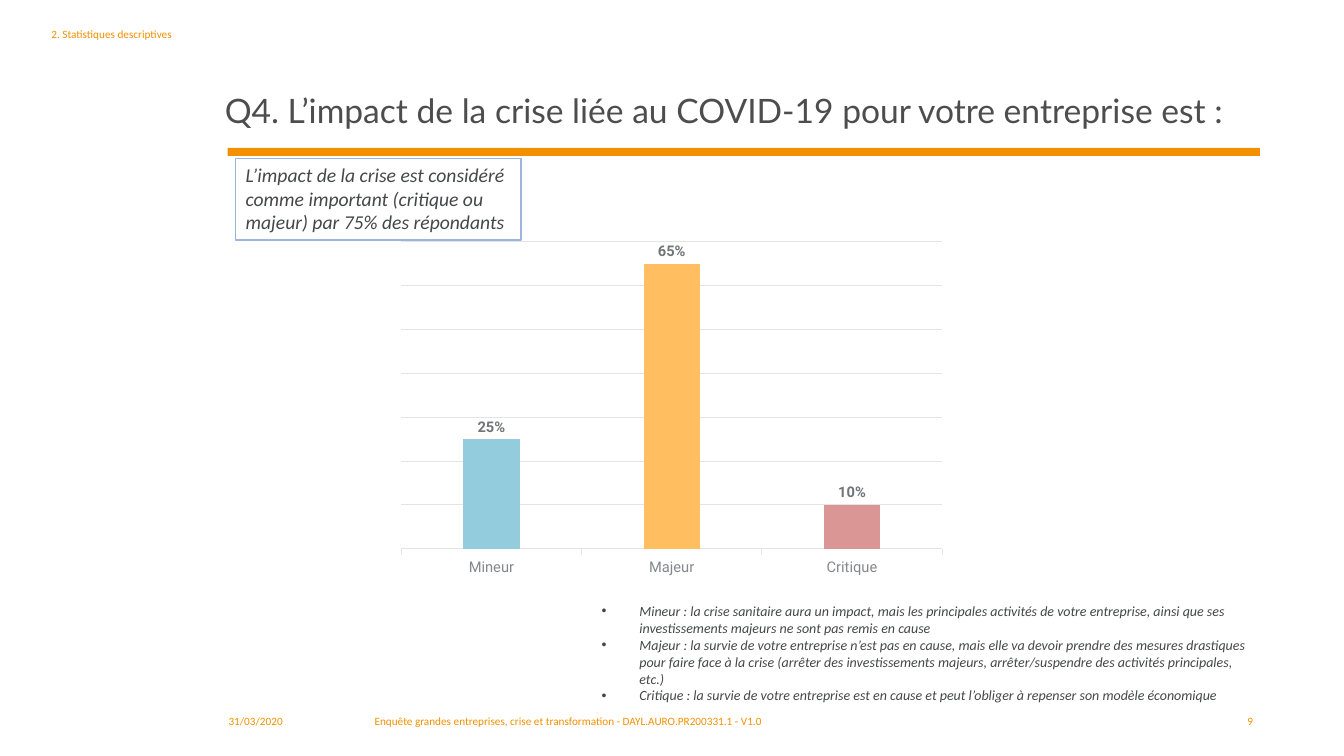
from dataclasses import dataclass

from lxml import etree
from pptx import Presentation
from pptx import util as u
from pptx.chart import data as chart_data
from pptx.dml.color import RGBColor
from pptx.enum import chart as ch
from pptx.enum import shapes, text
from pptx.oxml import parse_xml
from pptx.oxml.ns import nsdecls, qn
from pptx.util import Cm

ORANGE = RGBColor(0xF3, 0x90, 0x00)
WHITE = RGBColor(0xFF, 0xFF, 0xFF)
TITLE_GREY = RGBColor(0x4D, 0x4D, 0x4D)
TEXT_GREY = RGBColor(0x45, 0x47, 0x48)
LABEL_GREY = RGBColor(0x72, 0x75, 0x77)
AXIS_GREY = RGBColor(0x85, 0x88, 0x8A)
GRID_GREY = RGBColor(0xE3, 0xE4, 0xE4)
FRAME_BLUE = RGBColor(0x9B, 0xB5, 0xDF)
BAR_BLUE = RGBColor(0x93, 0xCD, 0xDD)
BAR_ORANGE = RGBColor(0xFF, 0xBE, 0x5F)
BAR_RED = RGBColor(0xD9, 0x96, 0x94)

FOOTER_TOP = 17.88
FOOTER_HEIGHT = 0.91
LIST_INDENT = Cm(0.95)


@dataclass(frozen=True)
class Impact:
    name: str
    share: float
    color: RGBColor
    meaning: str


@dataclass(frozen=True)
class FooterPart:
    wording: str
    left: float
    width: float
    align: text.PP_ALIGN = text.PP_ALIGN.LEFT


IMPACTS = [
    Impact("Mineur", 0.25, BAR_BLUE,
           "la crise sanitaire aura un impact, mais les principales activités de votre "
           "entreprise, ainsi que ses investissements majeurs ne sont pas remis en cause"),
    Impact("Majeur", 0.65, BAR_ORANGE,
           "la survie de votre entreprise n’est pas en cause, mais elle va devoir prendre "
           "des mesures drastiques pour faire face à la crise (arrêter des investissements "
           "majeurs, arrêter/suspendre des activités principales, etc.)"),
    Impact("Critique", 0.1, BAR_RED,
           "la survie de votre entreprise est en cause et peut l’obliger à repenser son "
           "modèle économique"),
]

FOOTER = [
    FooterPart("31/03/2020", 5.51, 3.61),
    FooterPart("Enquête grandes entreprises, crise et transformation - "
               "DAYL.AURO.PR200331.1 - V1.0", 9.19, 13.89),
    FooterPart("9", 28.73, 3.1, text.PP_ALIGN.RIGHT),
]


def place(shape, left: float, top: float, width: float, height: float) -> None:
    shape.left, shape.top = Cm(left), Cm(top)
    shape.width, shape.height = Cm(width), Cm(height)


def style(font, size: float, color: RGBColor, name: str = "Calibri",
          italic: bool = False, bold: bool = False) -> None:
    font.name, font.size = name, u.Pt(size)
    font.italic, font.bold = italic, bold
    font.color.rgb = color


def write(shape, wording: str, size: float, color: RGBColor, name: str = "Calibri",
          italic: bool = False, align: text.PP_ALIGN = text.PP_ALIGN.LEFT,
          anchor: text.MSO_ANCHOR = text.MSO_ANCHOR.TOP) -> None:
    frame = shape.text_frame
    frame.text = wording
    frame.word_wrap = True
    frame.auto_size = text.MSO_AUTO_SIZE.NONE
    frame.vertical_anchor = anchor
    for paragraph in frame.paragraphs:
        paragraph.alignment = align
        paragraph.space_before = u.Pt(0)
        for run in paragraph.runs:
            style(run.font, size, color, name, italic)


def set_bullet(paragraph, indent: int, char: str = "") -> None:
    properties = paragraph._p.get_or_add_pPr()
    properties.set("marL", str(int(indent)))
    properties.set("indent", str(-int(indent)))
    if char:
        font = etree.SubElement(properties, qn("a:buFont"))
        font.set("typeface", "Arial")
        etree.SubElement(properties, qn("a:buChar")).set("char", char)
    else:
        etree.SubElement(properties, qn("a:buNone"))


def add_block(slide, left: float, top: float, width: float, height: float,
              fill: RGBColor):
    block = slide.shapes.add_shape(shapes.MSO_SHAPE.RECTANGLE, Cm(left), Cm(top),
                                   Cm(width), Cm(height))
    block.shadow.inherit = False
    block.fill.solid()
    block.fill.fore_color.rgb = fill
    block.line.fill.background()
    return block


def add_impact_chart(slide) -> None:
    shares = chart_data.CategoryChartData(number_format="0%")
    shares.categories = [impact.name for impact in IMPACTS]
    shares.add_series("Series 1", [impact.share for impact in IMPACTS])
    chart = slide.shapes.add_chart(ch.XL_CHART_TYPE.COLUMN_CLUSTERED, Cm(9.83), Cm(5.92),
                                   Cm(14.2), Cm(8.79), shares).chart
    style(chart.font, 10, TEXT_GREY, "Roboto")
    chart.has_legend = False
    chart.has_title = False

    scale = chart.value_axis
    scale.minimum_scale, scale.maximum_scale, scale.major_unit = 0, 0.7, 0.1
    scale.visible = False
    scale.has_major_gridlines = True
    levels = chart.category_axis
    levels.major_tick_mark = ch.XL_TICK_MARK.OUTSIDE
    style(levels.tick_labels.font, 10.5, AXIS_GREY, "Roboto")
    for line in (scale.major_gridlines.format.line, levels.format.line):
        line.color.rgb = GRID_GREY
        line.width = u.Pt(0.75)

    plot = chart.plots[0]
    plot.gap_width, plot.overlap = 219, -27
    plot.vary_by_categories = False
    bars = plot.series[0]
    bars.format.fill.solid()
    bars.format.fill.fore_color.rgb = ORANGE
    for index, impact in enumerate(IMPACTS):
        fill = bars.points[index].format.fill
        fill.solid()
        fill.fore_color.rgb = impact.color
    labels = bars.data_labels
    labels.show_value = True
    labels.number_format, labels.number_format_is_linked = "0%", False
    labels.position = ch.XL_LABEL_POSITION.OUTSIDE_END
    style(labels.font, 10.5, LABEL_GREY, "Roboto", bold=True)

    area = chart._chartSpace.chart.plotArea
    for layout in area.findall(qn("c:layout")):
        area.remove(layout)
    area.insert(0, parse_xml(
        f'<c:layout {nsdecls("c")}><c:manualLayout><c:layoutTarget val="inner"/>'
        '<c:xMode val="edge"/><c:yMode val="edge"/><c:x val="0.02"/><c:y val="0.02"/>'
        '<c:w val="0.96"/><c:h val="0.88"/></c:manualLayout></c:layout>'))


def main() -> None:
    deck = Presentation()
    deck.slide_width, deck.slide_height = Cm(33.87), Cm(19.05)
    slide = deck.slides.add_slide(deck.slide_layouts.get_by_name("Two Content"))
    title, section, definitions = slide.placeholders

    add_block(slide, 5.74, 3.73, 26.01, 0.2, ORANGE)

    place(title, 5.41, 0.56, 26.34, 2.87)
    write(title, "Q4. L’impact de la crise liée au COVID-19 pour votre entreprise est :",
          24, TITLE_GREY, "Lato", anchor=text.MSO_ANCHOR.BOTTOM)
    title.text_frame.paragraphs[0].line_spacing = 0.9

    place(section, 1.04, 0.56, 4.29, 3.48)
    write(section, "2. Statistiques descriptives", 8, ORANGE)
    set_bullet(section.text_frame.paragraphs[0], 0)

    for part in FOOTER:
        box = slide.shapes.add_textbox(Cm(part.left), Cm(FOOTER_TOP), Cm(part.width),
                                       Cm(FOOTER_HEIGHT))
        write(box, part.wording, 8, ORANGE, align=part.align)

    add_impact_chart(slide)

    finding = add_block(slide, 5.94, 3.99, 7.19, 2.06, WHITE)
    finding.line.color.rgb = FRAME_BLUE
    finding.line.width = u.Pt(1)
    write(finding, "L’impact de la crise est considéré comme important (critique ou majeur) "
          "par 75% des répondants", 14, TEXT_GREY, italic=True)

    place(definitions, 14.91, 15.06, 16.94, 2.82)
    write(definitions, "\n".join(f"{impact.name} : {impact.meaning}" for impact in IMPACTS),
          10, TEXT_GREY, italic=True)
    for paragraph in definitions.text_frame.paragraphs:
        set_bullet(paragraph, LIST_INDENT, "•")

    deck.save("out.pptx")


if __name__ == "__main__":
    main()
